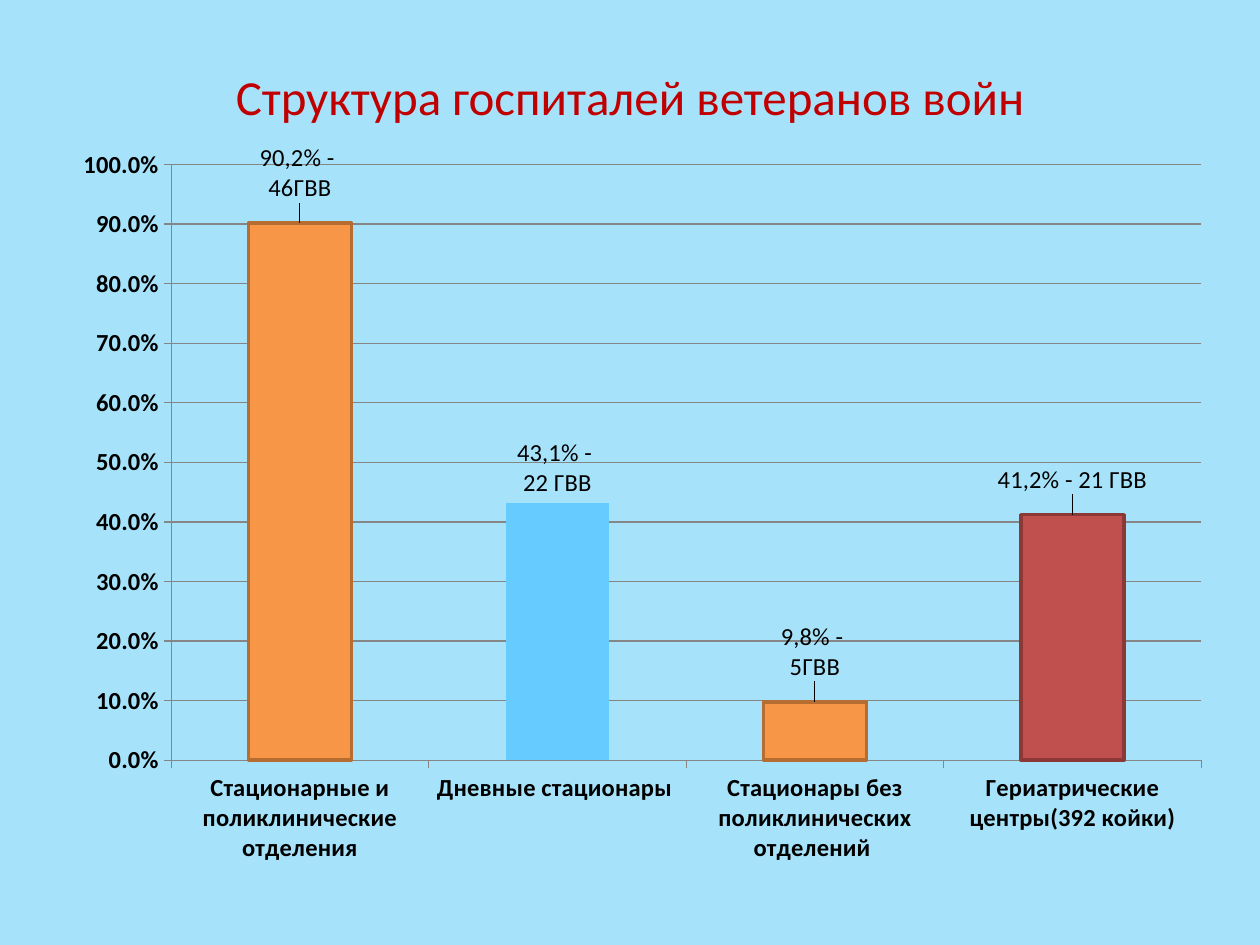
from pptx import Presentation
from pptx.chart.data import CategoryChartData
from pptx.dml.color import RGBColor
from pptx.enum.chart import XL_CHART_TYPE as ChartType, XL_LABEL_POSITION as LabelPosition, XL_TICK_MARK as TickMark
from pptx.enum.text import MSO_ANCHOR as Anchor, PP_ALIGN as Align
from pptx.oxml import parse_xml
from pptx.oxml.ns import nsdecls
from pptx.util import Inches, Pt

SKY = RGBColor(0xA6, 0xE3, 0xFA)
DARK_RED = RGBColor(0xC0, 0x00, 0x00)
BLACK = RGBColor(0x00, 0x00, 0x00)
GRAY = RGBColor(0x86, 0x86, 0x86)
BLUE = RGBColor(0x66, 0xCC, 0xFF)
ORANGE = RGBColor(0xF7, 0x96, 0x46)
ORANGE_EDGE = RGBColor(0xB6, 0x6D, 0x31)
RED = RGBColor(0xC0, 0x50, 0x4D)
RED_EDGE = RGBColor(0x8C, 0x38, 0x36)
FONT = "Calibri"

TITLE = "Структура госпиталей ветеранов войн"
# name, share, label, fill, edge, label shift
BARS = [
    ("Стационарные и поликлинические отделения", 0.902, "90,2% - \n46ГВВ", ORANGE, ORANGE_EDGE, -0.02),
    ("Дневные стационары ", 0.431, "43,1% - \n22 ГВВ", BLUE, None, 0),
    ("Стационары без поликлинических отделений ", 0.098, "9,8% - \n5ГВВ", ORANGE, ORANGE_EDGE, -0.02),
    ("Гериатрические центры(392 койки)", 0.412, "41,2% - 21 ГВВ", RED, RED_EDGE, -0.02),
]
PLOT_AREA = {"x": 0.1, "y": 0.04, "w": 0.88, "h": 0.8}


def set_font(font, size, color, bold):
    font.name, font.size, font.bold = FONT, Pt(size), bold
    font.color.rgb = color


def layout_xml(fractions, inner=False):
    target = '<c:layoutTarget val="inner"/>' if inner else ""
    modes = "".join(f'<c:{key}Mode val="edge"/>' for key in "xy") if inner else ""
    values = "".join(f'<c:{key} val="{value}"/>' for key, value in fractions.items())
    return parse_xml(f'<c:layout {nsdecls("c")}><c:manualLayout>{target}{modes}{values}'
                     "</c:manualLayout></c:layout>")


def add_title(page):
    title = page.shapes.title
    title.left, title.top, title.width, title.height = map(Inches, (0.5, 0.3, 9, 0.93))
    frame = title.text_frame
    frame.text = TITLE
    frame.vertical_anchor = Anchor.MIDDLE
    para = frame.paragraphs[0]
    para.alignment = Align.CENTER
    set_font(para.runs[0].font, 28, DARK_RED, False)


def style_bar(point, label, fill, edge, shift):
    point.format.fill.solid()
    point.format.fill.fore_color.rgb = fill
    if edge is None:
        point.format.line.fill.background()
    else:
        point.format.line.color.rgb = edge
        point.format.line.width = Pt(2)
    data_label = point.data_label
    data_label.text_frame.text = label
    for para in data_label.text_frame.paragraphs:
        for span in para.runs:
            set_font(span.font, 14, BLACK, False)
    data_label.position = LabelPosition.OUTSIDE_END
    if shift:
        text = data_label.text_frame._txBody.getparent()
        text.addprevious(layout_xml({"x": 0, "y": shift}))


def add_chart(page):
    data = CategoryChartData(number_format="0.0%")
    data.categories = [bar[0] for bar in BARS]
    data.add_series("Series 1", [bar[1] for bar in BARS])
    place = map(Inches, (0.43, 1.07, 9.29, 5.91))
    chart = page.shapes.add_chart(ChartType.COLUMN_CLUSTERED, *place, data).chart
    chart.has_title = chart.has_legend = False
    set_font(chart.font, 14, BLACK, True)
    for axis in (chart.category_axis, chart.value_axis):
        axis.major_tick_mark = TickMark.OUTSIDE
        axis.format.line.color.rgb = GRAY
    scale = chart.value_axis
    scale.minimum_scale, scale.maximum_scale, scale.major_unit = 0, 1, 0.1
    scale.tick_labels.number_format = "0.0%"
    scale.tick_labels.number_format_is_linked = False
    scale.major_gridlines.format.line.color.rgb = GRAY

    plot = chart.plots[0]
    plot.gap_width = 150
    plot.vary_by_categories = False
    series = plot.series[0]
    series.format.fill.solid()
    series.format.fill.fore_color.rgb = BLUE
    labels = series.data_labels
    labels.show_value = True
    labels.number_format = "0.0%"
    labels.number_format_is_linked = False
    for index, (_, _, *style) in enumerate(BARS):
        style_bar(series.points[index], *style)

    area = chart._chartSpace.chart.plotArea
    for old in area.xpath("c:layout"):
        area.remove(old)
    area.insert(0, layout_xml(PLOT_AREA, inner=True))


def main():
    deck = Presentation()
    deck.slide_width, deck.slide_height = Inches(10), Inches(7.5)
    page = deck.slides.add_slide(deck.slide_layouts[5])
    page.background.fill.solid()
    page.background.fill.fore_color.rgb = SKY
    add_chart(page)
    add_title(page)
    deck.save("out.pptx")


if __name__ == "__main__":
    main()
